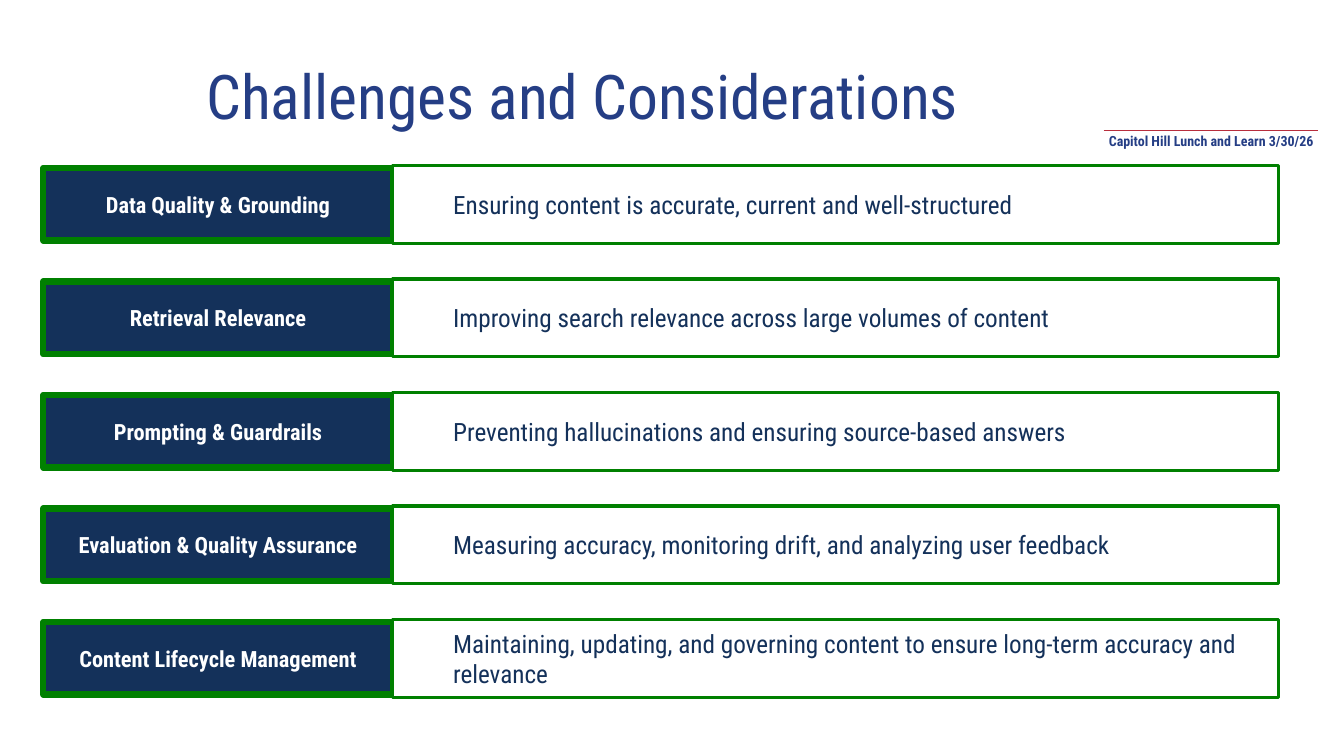
from pptx import Presentation
from pptx.dml.color import RGBColor
from pptx.enum.shapes import MSO_CONNECTOR, MSO_SHAPE
from pptx.enum.text import MSO_ANCHOR, PP_ALIGN
from pptx.oxml.ns import qn
from pptx.util import Cm, Pt
from lxml.etree import SubElement

BLUE = RGBColor(0x25, 0x3E, 0x85)
NAVY = RGBColor(0x14, 0x31, 0x5A)
GREEN = RGBColor(0x00, 0x80, 0x00)
RED = RGBColor(0xB8, 0x2E, 0x3D)
WHITE = RGBColor(0xFF, 0xFF, 0xFF)

CHALLENGES = [
    ("Data Quality & Grounding",
     "Ensuring content is accurate, current and well-structured"),
    ("Retrieval Relevance",
     "Improving search relevance across large volumes of content"),
    ("Prompting & Guardrails",
     "Preventing hallucinations and ensuring source-based answers"),
    ("Evaluation & Quality Assurance",
     "Measuring accuracy, monitoring drift, and analyzing user feedback"),
    ("Content Lifecycle Management",
     "Maintaining, updating, and governing content to ensure long-term "
     "accuracy and relevance"),
]


class SlideBuilder:
    font = "Roboto Condensed"

    def __init__(self, slide):
        self.shapes = slide.shapes

    def fill_text(self, sp, text, size, color, bold=False,
                  align=PP_ALIGN.LEFT, anchor=MSO_ANCHOR.MIDDLE):
        tf = sp.text_frame
        tf.text = text
        tf.word_wrap = True
        tf.vertical_anchor = anchor
        p = tf.paragraphs[0]
        p.alignment = align
        f = p.runs[0].font
        f.name, f.size, f.bold = self.font, Pt(size), bold
        f.color.rgb = color
        return p

    def label(self, x, y, w, h, text, size, **style):
        sp = self.shapes.add_textbox(Cm(x), Cm(y), Cm(w), Cm(h))
        return self.fill_text(sp, text, size, BLUE, **style)

    def box(self, x, middle, w, h, fill, border, text, size, color, **style):
        sp = self.shapes.add_shape(MSO_SHAPE.RECTANGLE, Cm(x),
                                   Cm(middle - h / 2), Cm(w), Cm(h))
        sp.shadow.inherit = False
        sp.fill.solid()
        sp.fill.fore_color.rgb = fill
        sp.line.color.rgb = GREEN
        sp.line.width = Pt(border)
        return self.fill_text(sp, text, size, color, **style)

    def rule(self, x1, x2, y):
        line = self.shapes.add_connector(MSO_CONNECTOR.STRAIGHT,
                                         Cm(x1), Cm(y), Cm(x2), Cm(y))
        line.line.color.rgb = RED
        line.line.width = Pt(0.75)
        SubElement(line._element.spPr, qn("a:effectLst"))


def main():
    prs = Presentation()
    prs.slide_width, prs.slide_height = Cm(33.87), Cm(19.05)
    s = SlideBuilder(prs.slides.add_slide(prs.slide_layouts[6]))

    # Event tag under a thin rule
    s.label(27.66, 3.22, 5.72, 1.17, "Capitol Hill Lunch and Learn 3/30/26",
            10, bold=True, align=PP_ALIGN.CENTER, anchor=MSO_ANCHOR.TOP)
    s.rule(27.81, 33.22, 3.28)

    # One row per challenge: label on the left, description on the right
    left, label_width = 1.09, 8.81
    first_middle, pitch = 5.15, 2.86
    for i, (challenge, description) in enumerate(CHALLENGES):
        middle = first_middle + i * pitch
        s.box(left, middle, label_width, 1.83, NAVY, 4.5, challenge, 16, WHITE,
              bold=True, align=PP_ALIGN.CENTER)
        p = s.box(left + label_width, middle, 22.33, 1.96, WHITE, 2.25,
                  description, 18, NAVY)
        p.level = 1
        pPr = p._p.get_or_add_pPr()
        pPr.set("marL", str(Cm(1.27)))
        pPr.set("indent", "0")

    # Title
    title = s.label(4.95, 1.19, 20.98, 2.64, "Challenges and Considerations", 44)
    title.line_spacing = 0.9

    prs.save("out.pptx")


if __name__ == "__main__":
    main()
